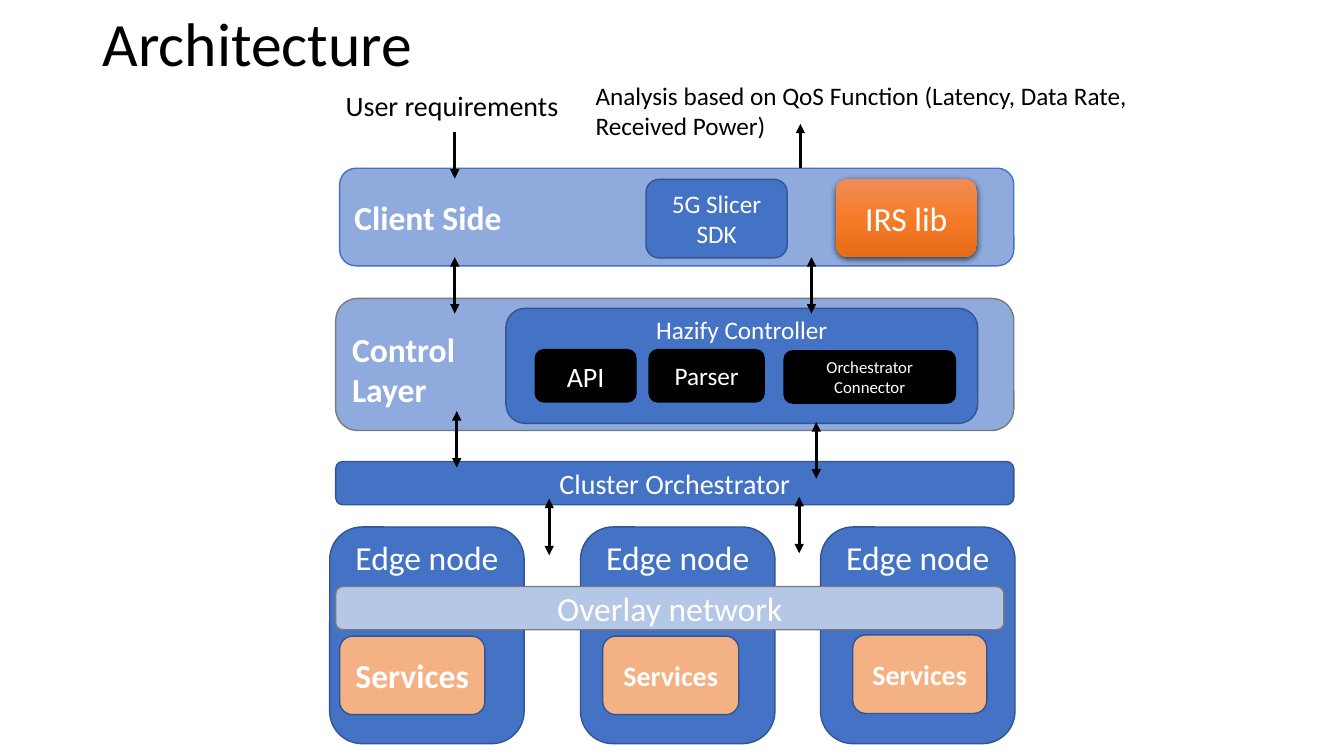
from copy import deepcopy
from dataclasses import dataclass

from lxml import etree
from pptx import Presentation
from pptx.dml.color import RGBColor
from pptx.enum.shapes import MSO_CONNECTOR, MSO_SHAPE
from pptx.enum.text import MSO_ANCHOR, MSO_AUTO_SIZE, PP_ALIGN
from pptx.oxml.ns import qn
from pptx.shapes.autoshape import Shape
from pptx.slide import Slide
from pptx.text.text import TextFrame
from pptx.util import Cm, Pt

ROUNDED = MSO_SHAPE.ROUNDED_RECTANGLE
STRAIGHT = MSO_CONNECTOR.STRAIGHT
LEFT, CENTER = PP_ALIGN.LEFT, PP_ALIGN.CENTER
TOP, MIDDLE = MSO_ANCHOR.TOP, MSO_ANCHOR.MIDDLE
NO_AUTOFIT = MSO_AUTO_SIZE.NONE


@dataclass(frozen=True)
class Theme:
    font: str = "Calibri"
    black: str = "000000"
    white: str = "FFFFFF"
    blue: str = "4472C4"
    blue_edge: str = "325491"
    layer: str = "8FAADC"
    overlay: str = "B4C7E7"
    gray_edge: str = "7A7A7A"
    service: str = "F4B183"
    oranges: tuple[str, ...] = ("F18C57", "F67B28", "E56C19")
    title: int = 44
    heading: int = 24
    label: int = 20
    detail: int = 18
    small: int = 12


THEME = Theme()


@dataclass(frozen=True)
class Box:
    text: str
    left: float
    top: float
    width: float
    height: float
    size: int = THEME.heading
    fill: str = THEME.blue
    edge: str = THEME.blue_edge
    bold: bool = False
    align: PP_ALIGN = CENTER
    anchor: MSO_ANCHOR = MIDDLE
    inset_top: float = 0.13


@dataclass(frozen=True)
class Caption:
    text: str
    left: float
    top: float
    width: float
    height: float
    size: int


@dataclass(frozen=True)
class Arrow:
    x: float
    start: float
    end: float
    both_ways: bool = False


def edge_node(left: float) -> Box:
    return Box("Edge node", left, 13.28, 4.9, 5.46, anchor=TOP, inset_top=0)


def service(left: float, top: float, width: float, size: int) -> Box:
    return Box("Services", left, top, width, 1.98, size, THEME.service, bold=True)


def module(text: str, left: float, top: float, width: float, size: int) -> Box:
    return Box(text, left, top, width, 1.32, size, THEME.black, THEME.black)


def link(x: float, start: float) -> Arrow:
    """Two-way arrow between neighbouring layers."""
    return Arrow(x, start, start + 1.42, both_ways=True)


BOXES = [
    *(edge_node(left) for left in (8.31, 14.63, 20.68)),
    Box("Client Side", 8.56, 4.24, 16.99, 2.46, fill=THEME.layer,
        edge=THEME.blue, bold=True, align=LEFT),
    Box("5G Slicer SDK", 16.28, 4.52, 3.56, 1.98, THEME.detail),
    Box("Control\nLayer", 8.46, 7.52, 17.09, 3.33, fill=THEME.layer,
        edge=THEME.gray_edge, bold=True, align=LEFT, inset_top=0.36),
    Box("Hazify Controller", 12.75, 7.77, 11.89, 2.9, THEME.detail,
        anchor=TOP, inset_top=0),
    module("API", 13.49, 8.81, 2.54, THEME.label),
    module("Parser", 16.36, 8.81, 2.9, THEME.detail),
    module("Orchestrator Connector", 19.76, 8.84, 4.32, THEME.small),
    Box("Cluster Orchestrator", 8.46, 11.63, 17.09, 1.09, THEME.label),
    Box("Overlay network", 8.46, 14.78, 16.84, 1.09,
        fill=THEME.overlay, edge=THEME.gray_edge),
    service(8.56, 16.03, 3.66, THEME.heading),
    service(15.19, 16.03, 3.43, THEME.label),
    service(21.49, 16, 3.38, THEME.label),
]
IRS_BOX = Box("IRS lib", 21.06, 4.5, 3.56, 1.98)

CAPTIONS = [
    Caption("User requirements", 8.46, 2.11, 6.2, 1.12, THEME.label),
    Caption("Analysis based on QoS Function (Latency, Data Rate,\nReceived Power)",
            14.76, 1.9, 14.6, 1.8, THEME.detail),
]

ARROWS = [
    link(11.46, 6.48), link(20.45, 6.48),
    link(11.51, 10.36), link(20.57, 10.64),
    link(13.84, 12.57), link(20.14, 12.52),
    Arrow(11.46, 3.33, 4.5), Arrow(20.17, 4.24, 3.12),
]


def rgb(color: str) -> RGBColor:
    return RGBColor.from_string(color)


def write(frame: TextFrame, text: str, size: int, color: str,
          align: PP_ALIGN = LEFT, bold: bool = False) -> None:
    frame.text = text
    frame.word_wrap = True
    for para in frame.paragraphs:
        para.alignment = align
        for span in para.runs:
            span.font.name = THEME.font
            span.font.size = Pt(size)
            span.font.bold = bold
            span.font.color.rgb = rgb(color)


def draw_box(slide: Slide, box: Box) -> Shape:
    shape = slide.shapes.add_shape(
        ROUNDED, Cm(box.left), Cm(box.top), Cm(box.width), Cm(box.height))
    shape.shadow.inherit = False
    shape.fill.solid()
    shape.fill.fore_color.rgb = rgb(box.fill)
    shape.line.color.rgb = rgb(box.edge)
    shape.line.width = Pt(1)
    frame = shape.text_frame
    frame.vertical_anchor = box.anchor
    frame.margin_top = Cm(box.inset_top)
    write(frame, box.text, box.size, THEME.white, box.align, box.bold)
    return shape


def add_glow_finish(shape: Shape) -> None:
    """Give the box an orange gradient and a soft shadow below, without outline."""
    shape.line.fill.background()
    shape.fill.gradient()
    shape.fill.gradient_angle = 270
    properties = shape.element.spPr
    stops = properties.find(f"{qn('a:gradFill')}/{qn('a:gsLst')}")
    stops.insert(1, deepcopy(stops[0]))
    for index, (stop, color) in enumerate(
            zip(shape.fill.gradient_stops, THEME.oranges)):
        stop.position = index / 2
        stop.color.rgb = rgb(color)
    shadow = etree.SubElement(
        properties.find(qn("a:effectLst")), qn("a:outerShdw"),
        blurRad=str(Pt(4.5)), dist=str(Pt(1.5)), dir="5400000", rotWithShape="0")
    tint = etree.SubElement(shadow, qn("a:srgbClr"), val=THEME.black)
    etree.SubElement(tint, qn("a:alpha"), val="63000")


def draw_caption(slide: Slide, caption: Caption) -> None:
    box = slide.shapes.add_textbox(
        Cm(caption.left), Cm(caption.top), Cm(caption.width), Cm(caption.height))
    write(box.text_frame, caption.text, caption.size, THEME.black)


def draw_arrow(slide: Slide, arrow: Arrow) -> None:
    connector = slide.shapes.add_connector(
        STRAIGHT, Cm(arrow.x), Cm(arrow.start), Cm(arrow.x), Cm(arrow.end))
    connector.line.color.rgb = rgb(THEME.black)
    connector.line.width = Pt(2.25)
    line = connector.line._get_or_add_ln()
    for end in ("a:headEnd", "a:tailEnd") if arrow.both_ways else ("a:tailEnd",):
        etree.SubElement(line, qn(end), type="triangle")
    etree.SubElement(connector.element.spPr, qn("a:effectLst"))


def draw_title(slide: Slide) -> None:
    title = slide.shapes.title
    title.left, title.top = Cm(2.33), Cm(-0.66)
    title.width, title.height = Cm(29.21), Cm(3.68)
    frame = title.text_frame
    write(frame, "Architecture", THEME.title, THEME.black)
    frame.auto_size = NO_AUTOFIT
    frame.vertical_anchor = MIDDLE
    frame.paragraphs[0].line_spacing = 0.9


def main() -> None:
    deck = Presentation()
    deck.slide_width, deck.slide_height = Cm(33.87), Cm(19.05)
    slide = deck.slides.add_slide(deck.slide_layouts[5])
    draw_title(slide)
    for box in BOXES:
        draw_box(slide, box)
    for arrow in ARROWS:
        draw_arrow(slide, arrow)
    for caption in CAPTIONS:
        draw_caption(slide, caption)
    add_glow_finish(draw_box(slide, IRS_BOX))
    deck.save("out.pptx")


if __name__ == "__main__":
    main()
